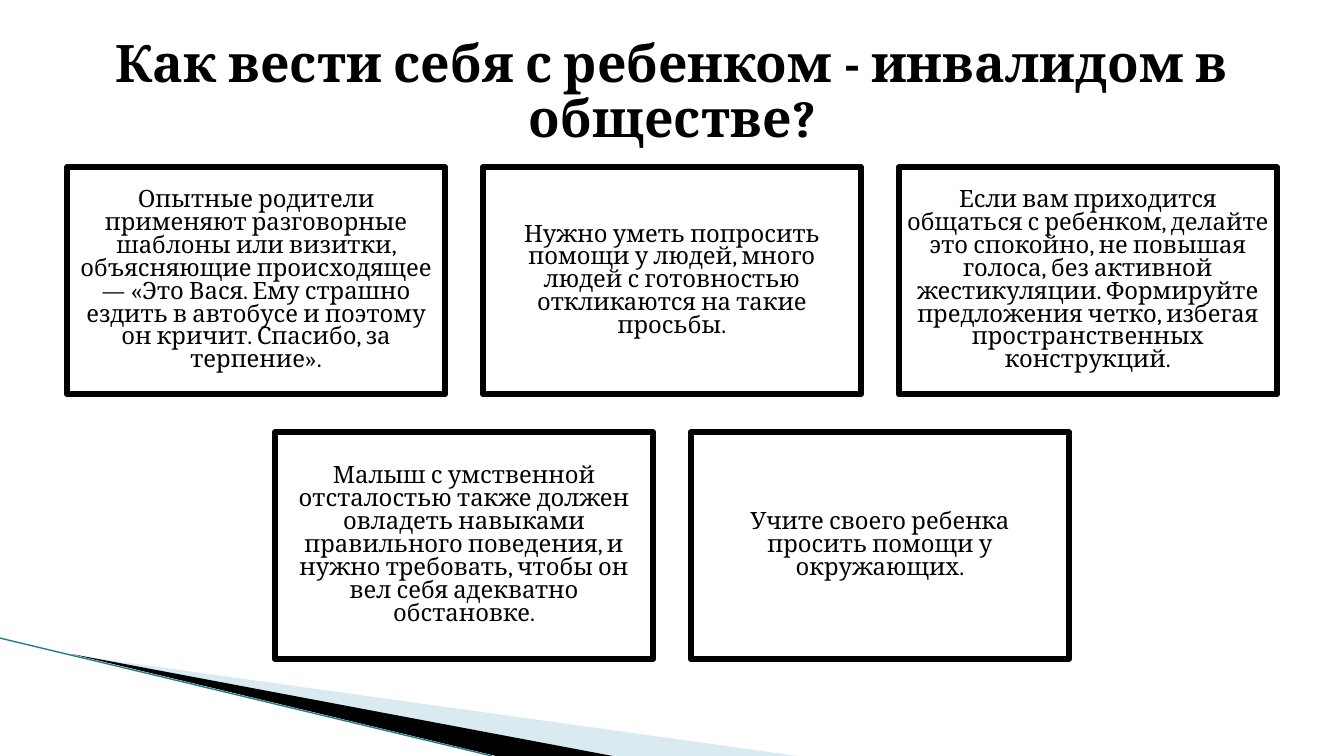
from dataclasses import dataclass

from lxml import etree
from pptx import Presentation
from pptx.dml.color import RGBColor
from pptx.enum.shapes import MSO_CONNECTOR, MSO_SHAPE
from pptx.enum.text import MSO_ANCHOR, MSO_AUTO_SIZE, PP_ALIGN
from pptx.oxml.ns import qn
from pptx.util import Cm, Pt

RECT = MSO_SHAPE.RECTANGLE
STRAIGHT = MSO_CONNECTOR.STRAIGHT
MIDDLE = MSO_ANCHOR.MIDDLE
FIXED = MSO_AUTO_SIZE.NONE
CENTER = PP_ALIGN.CENTER

WIDTH, HEIGHT = 33.87, 19.05
CARD_W, CARD_H = 9.53, 5.72
GAP = 0.95
TOP = 4.22

TITLE = "Как вести себя с ребенком - инвалидом в обществе?"
ROWS = [
    [
        "Опытные родители применяют разговорные шаблоны или визитки, "
        "объясняющие происходящее — «Это Вася. Ему страшно ездить в автобусе "
        "и поэтому он кричит. Спасибо, за терпение».",
        "Нужно уметь попросить помощи у людей, много людей с готовностью "
        "откликаются на такие просьбы.",
        "Если вам приходится общаться с ребенком, делайте это спокойно, "
        "не повышая голоса, без активной жестикуляции. Формируйте предложения "
        "четко, избегая пространственных конструкций.",
    ],
    [
        "Малыш с умственной отсталостью также должен овладеть навыками "
        "правильного поведения, и нужно требовать, чтобы он вел себя "
        "адекватно обстановке.",
        "Учите своего ребенка просить помощи у окружающих.",
    ],
]


@dataclass
class Theme:
    font: str = "Cambria"
    ink: RGBColor = RGBColor(0, 0, 0)
    pale: RGBColor = RGBColor(0xA0, 0xCB, 0xDC)
    teal: RGBColor = RGBColor(0x1F, 0x7A, 0x8C)
    head: float = 36.9
    body: float = 17
    border: float = 4.33
    hair: float = 0.95


class Painter:
    def __init__(self, slide, theme):
        self.slide = slide
        self.shapes = slide.shapes
        self.theme = theme

    def label(self, shape, text, size, spacing, inset, bold=False):
        frame = shape.text_frame
        frame.text = text
        frame.word_wrap = True
        frame.auto_size = FIXED
        frame.vertical_anchor = MIDDLE
        frame.margin_left = frame.margin_right = Cm(inset)
        frame.margin_top = frame.margin_bottom = Cm(min(inset, 0.18))
        para = frame.paragraphs[0]
        para.alignment = CENTER
        para.line_spacing = spacing
        para.font.name = self.theme.font
        para.font.size = Pt(size)
        para.font.bold = bold
        para.font.color.rgb = self.theme.ink

    def title(self, text, left, top, width, height):
        shape = self.shapes.title
        shape.left, shape.top = Cm(left), Cm(top)
        shape.width, shape.height = Cm(width), Cm(height)
        self.label(shape, text, self.theme.head, 0.9, 0.25, True)

    def wedge(self, points, color, alpha=None):
        start, *rest = [(Cm(x), Cm(y)) for x, y in points]
        builder = self.shapes.build_freeform(*start)
        builder.add_line_segments(rest, close=True)
        shape = builder.convert_to_shape()
        shape.shadow.inherit = False
        shape.fill.solid()
        shape.fill.fore_color.rgb = color
        shape.line.fill.background()
        if alpha is not None:
            tint = shape._element.spPr.find(".//" + qn("a:srgbClr"))
            etree.SubElement(tint, qn("a:alpha")).set("val", str(alpha * 1000))

    def line(self, start, end):
        ends = [Cm(value) for value in (*start, *end)]
        edge = self.shapes.add_connector(STRAIGHT, *ends)
        edge.line.color.rgb = self.theme.teal
        edge.line.width = Pt(self.theme.hair)
        etree.SubElement(edge._element.spPr, qn("a:effectLst"))

    def card(self, text, left, top):
        shape = self.shapes.add_shape(
            RECT, Cm(left), Cm(top), Cm(CARD_W), Cm(CARD_H)
        )
        shape.shadow.inherit = False
        shape.fill.background()
        shape.line.color.rgb = self.theme.ink
        shape.line.width = Pt(self.theme.border)
        border = shape._element.spPr.find(qn("a:ln"))
        etree.SubElement(border, qn("a:round"))
        self.label(shape, text, self.theme.body, 0.8, 0.18)


def main():
    deck = Presentation()
    deck.slide_width, deck.slide_height = Cm(WIDTH), Cm(HEIGHT)
    theme = Theme()
    page = Painter(deck.slides.add_slide(deck.slide_layouts[5]), theme)

    page.wedge([(1.85, 16.51), (20.1, HEIGHT), (15.44, HEIGHT)], theme.pale, 40)
    page.wedge([(1.8, 16.48), (15.44, HEIGHT), (12.5, HEIGHT)], theme.ink)
    page.line((0, 16.08), (12.4, HEIGHT))
    page.title(TITLE, 1.7, 0.76, 30.48, 3.18)

    for row, texts in enumerate(ROWS):
        span = len(texts) * (CARD_W + GAP) - GAP
        left = (WIDTH - span) / 2
        for col, text in enumerate(texts):
            page.card(text, left + col * (CARD_W + GAP), TOP + row * (CARD_H + GAP))

    deck.save("out.pptx")


if __name__ == "__main__":
    main()
